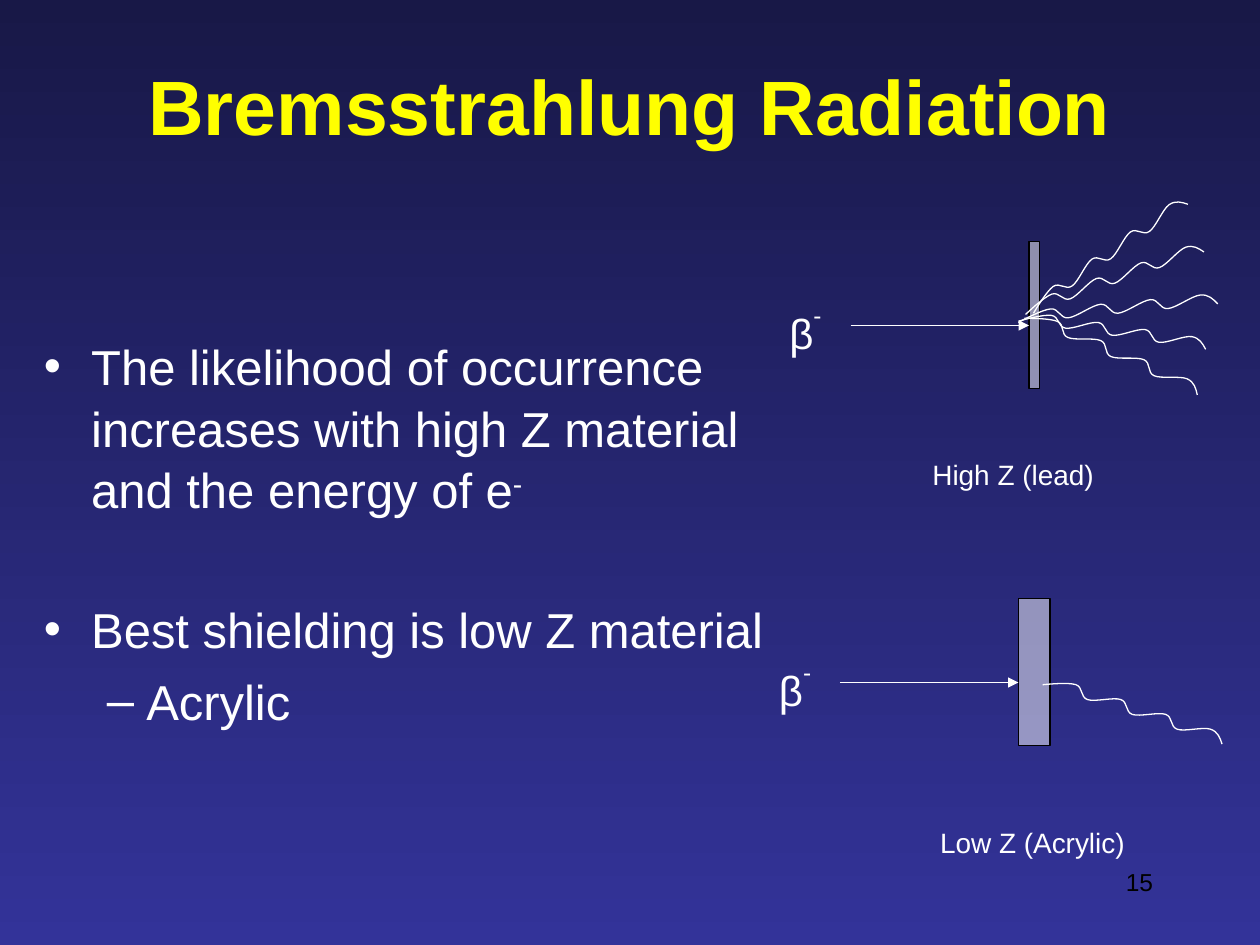
from dataclasses import dataclass
from lxml import etree
from pptx import Presentation
from pptx.dml.color import RGBColor as RGB
from pptx.enum.shapes import MSO_CONNECTOR as Line, MSO_SHAPE as Shape
from pptx.enum.text import MSO_ANCHOR as Anchor, PP_ALIGN as Align
from pptx.oxml.ns import qn
from pptx.util import Pt


@dataclass(frozen=True)
class Theme:
    """Colours, font and type sizes."""
    top: RGB = RGB(0x18, 0x18, 0x47)
    base: RGB = RGB(0x33, 0x33, 0x99)
    gold: RGB = RGB(0xFF, 0xFF, 0)
    white: RGB = RGB(0xFF, 0xFF, 0xFF)
    black: RGB = RGB(0, 0, 0)
    font: str = "Arial"
    title: int = 44
    body: int = 28
    beta: int = 24
    label: int = 16
    page: int = 14
    rule: float = 0.75


T = Theme()


def box_of(vals):
    """Turn four lengths into points."""
    return [Pt(v) for v in vals]


def add_run(par, text, size, color, bold=False, shift=0):
    """Add one styled run, raised by shift percent."""
    run = par.add_run()
    run.text = text
    font = run.font
    font.name, font.size, font.bold = T.font, Pt(size), bold
    font.color.rgb = color
    if shift:
        run._r.get_or_add_rPr().set("baseline", str(shift * 1000))


def add_text(shapes, box, runs, size, color=T.white, align=Align.LEFT, wrap=True):
    """Add a one-line text box from (text, shift) runs."""
    frame = shapes.add_textbox(*box_of(box)).text_frame
    frame.word_wrap = wrap
    par = frame.paragraphs[0]
    par.alignment = align
    for text, shift in runs:
        add_run(par, text, size, color, shift=shift)


def add_title(slide, box, text):
    """Place and style the title."""
    title = slide.shapes.title
    title.left, title.top, title.width, title.height = box_of(box)
    frame = title.text_frame
    frame.vertical_anchor = Anchor.MIDDLE
    par = frame.paragraphs[0]
    par.alignment = Align.CENTER
    add_run(par, text, T.title, T.gold, bold=True)


def add_list(slide, box, items):
    """Add bullets from (mark, left, hang, gap, runs) items."""
    frame = slide.shapes.add_textbox(*box_of(box)).text_frame
    frame.word_wrap = True
    for i, (mark, left, hang, gap, runs) in enumerate(items):
        par = frame.add_paragraph() if i else frame.paragraphs[0]
        props = par._p.get_or_add_pPr()
        props.set("marL", str(Pt(left)))
        props.set("indent", str(-Pt(hang)))
        etree.SubElement(props, qn("a:buFont"), typeface=T.font)
        etree.SubElement(props, qn("a:buChar"), char=mark)
        par.line_spacing = 1.05
        par.space_before = Pt(gap)
        for text, shift in runs:
            add_run(par, text, T.body, T.white, shift=shift)


def add_bar(shapes, box):
    """Add a half-clear shield."""
    bar = shapes.add_shape(Shape.RECTANGLE, *box_of(box))
    bar.shadow.inherit = False
    bar.fill.solid()
    bar.fill.fore_color.rgb = T.white
    tint = bar._element.spPr.find(qn("a:solidFill"))[0]
    etree.SubElement(tint, qn("a:alpha"), val="50000")
    bar.line.color.rgb = T.black
    bar.line.width = Pt(T.rule)


def add_arrow(shapes, x, y, end):
    """Add a level arrow from x to end."""
    arrow = shapes.add_connector(Line.STRAIGHT, Pt(x), Pt(y), Pt(end), Pt(y))
    arrow.line.color.rgb = T.white
    arrow.line.width = Pt(T.rule)
    etree.SubElement(arrow.line._get_or_add_ln(), qn("a:tailEnd"), type="triangle")
    etree.SubElement(arrow._element.spPr, qn("a:effectLst"))


def wave_points(x, y, size, amp=3):
    """Give the Bezier points of an upright wave centred on x, y."""
    unit = size / 12
    top = y - size / 2
    knots = [0, 1, 3, 4, 6, 7, 9, 10, 12]
    points = [(x + amp, top)]
    for i, (a, b) in enumerate(zip(knots, knots[1:])):
        side = amp if i % 2 else -amp
        first = (0, a + 0.25) if i == 0 else (-side, a + 0.5)
        last = (amp * 0.6, b - 0.3) if b == 12 else (side, b - 0.5)
        for dx, step in (first, last, (side, b)):
            points.append((x + dx, top + step * unit))
    return points


def add_wave(shapes, x, y, size, turn):
    """Add a curved wave turned about its centre."""
    start, *rest = [(Pt(a), Pt(b)) for a, b in wave_points(x, y, size)]
    pen = shapes.build_freeform(*start)
    pen.add_line_segments(rest, close=False)
    wave = pen.convert_to_shape()
    wave.shadow.inherit = False
    wave.fill.background()
    wave.line.color.rgb = T.white
    wave.line.width = Pt(T.rule)
    wave.rotation = turn
    route = next(wave._element.iter(qn("a:path")))
    steps = route.findall(qn("a:lnTo"))
    for i in range(0, len(steps), 3):
        curve = etree.SubElement(route, qn("a:cubicBezTo"))
        for step in steps[i:i + 3]:
            curve.append(step[0])
            route.remove(step)


def add_scene(slide, x, y, thick, waves):
    """Draw a beta ray that meets a shield and gives off waves."""
    shapes = slide.shapes.add_group_shape().shapes
    add_bar(shapes, (x + 144, y - 30, thick, 84))
    add_arrow(shapes, x + 42, y + 18, x + 144)
    for dx, dy, size, turn in waves:
        add_wave(shapes, x + dx, y + dy, size, turn)
    add_text(shapes, (x, y, 42, 36), [("β", 0), ("-", 60)], T.beta)


def main():
    """Build the deck."""
    deck = Presentation()
    deck.slide_width, deck.slide_height = Pt(720), Pt(540)
    slide = deck.slides.add_slide(deck.slide_layouts[5])
    fill = slide.background.fill
    fill.gradient()
    fill.gradient_angle = 270
    for stop, color in zip(fill.gradient_stops, (T.top, T.base)):
        stop.color.rgb = color

    add_title(slide, (60, 30, 600, 60), "Bremsstrahlung Radiation")
    add_list(slide, (18, 187, 436, 222), [
        ("•", 27, 27, 0, [("The likelihood of occurrence increases with high Z "
                           "material and the energy of e", 0), ("-", 30)]),
        ("•", 27, 27, 44.5, [("Best shielding is low Z material", 0)]),
        ("–", 58.5, 22.5, 5.6, [("Acrylic", 0)]),
    ])
    add_scene(slide, 444, 168, 6, [
        (192, -9, 108, 70.7), (194.6, 8, 114.5, 84.7), (189, -22.6, 108, 54.8),
        (192, 20.6, 108, 98.6), (192, 33, 108, 113.9)])
    add_scene(slide, 438, 372, 18, [(210, 33.4, 108, 108.3)])
    add_text(slide.shapes, (525.6, 258, 106.6, 26.6), [("High Z (lead)", 0)],
             T.label, align=Align.CENTER, wrap=False)
    add_text(slide.shapes, (516, 468, 148, 26.6), [("Low Z (Acrylic)", 0)],
             T.label, align=Align.CENTER)
    add_text(slide.shapes, (516, 492, 150, 36), [("15", 0)],
             T.page, T.black, Align.RIGHT)
    deck.save("out.pptx")


if __name__ == "__main__":
    main()
